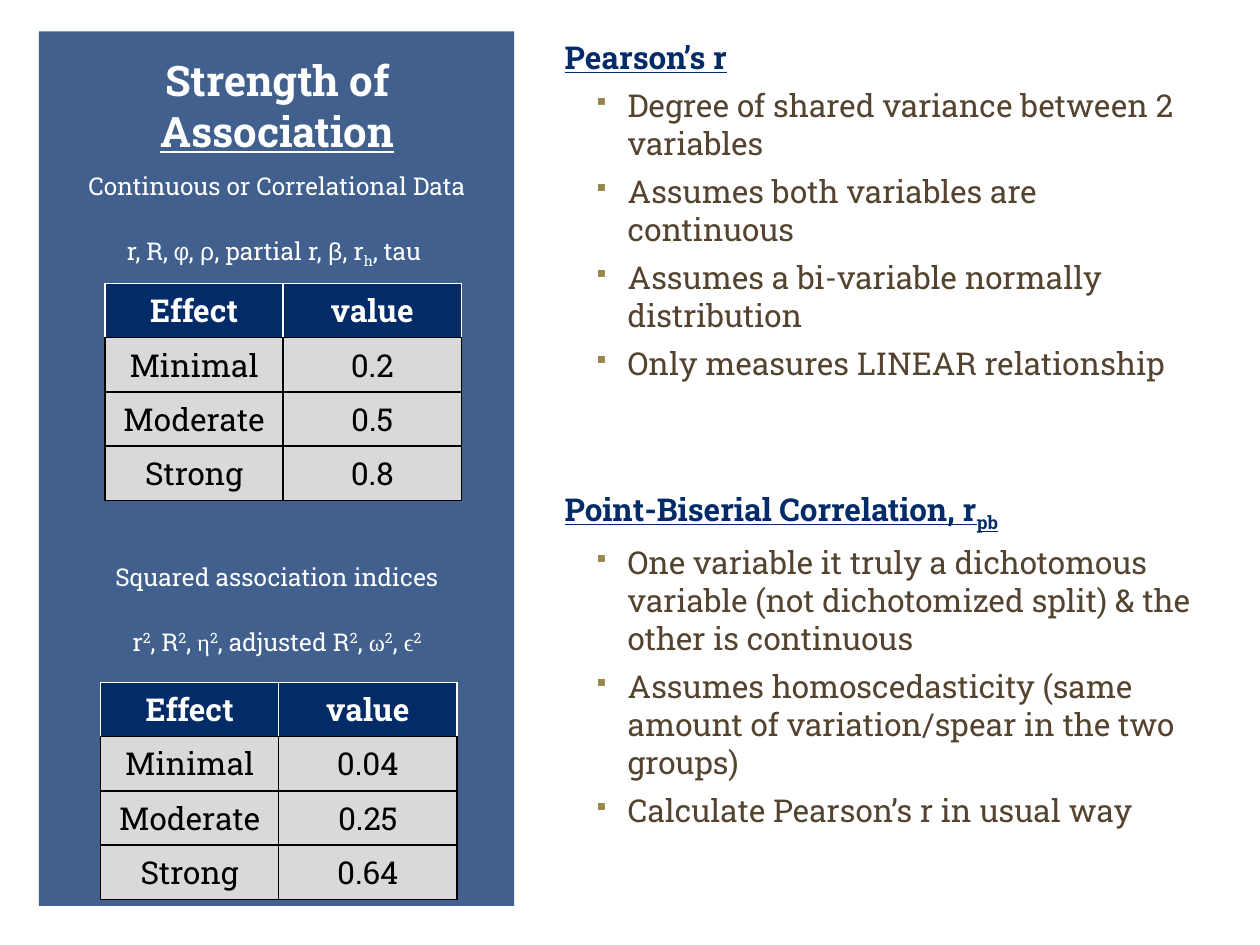
from lxml.etree import SubElement
from pptx import Presentation
from pptx.dml.color import RGBColor
from pptx.enum.shapes import MSO_SHAPE as Shape
from pptx.enum.text import MSO_ANCHOR as Anchor, PP_ALIGN as Align
from pptx.oxml.ns import qn
from pptx.util import Pt

FONT = "Roboto Slab"
NAVY, WHITE, BLACK = "022B68", "FFFFFF", "000000"
BROWN, GOLD, GREY = "54432F", "99864B", "D9D9D9"
BASELINES = {"sub": "-25000", "sup": "30000"}
MONO, SERIF = "Courier New", "Times New Roman"

TITLE = [("Strength of", False), ("Association", True)]
SQUARE = ("2", "sup")
ASSOCIATIONS = [
    {
        "caption": "Continuous or Correlational Data",
        "indices": [("r, R, ", ""), ("φ", MONO), (", ", ""), ("ρ", MONO),
                    (", partial r, ", ""), ("β", MONO), (", r", ""),
                    ("h", "sub"), (", tau ", "")],
        "effects": [("Effect", "value"), ("Minimal", "0.2"),
                    ("Moderate", "0.5"), ("Strong", "0.8")],
        "caption_top": 94.3, "table_at": (60, 162),
    },
    {
        "caption": "Squared association indices",
        "indices": [("r", ""), SQUARE, (", R", ""), SQUARE, (", ", ""),
                    ("η", SERIF), SQUARE, (", adjusted R", ""), SQUARE,
                    (", ", ""), ("ω", SERIF), SQUARE, (", ", ""),
                    ("ϵ", SERIF), SQUARE],
        "effects": [("Effect", "value"), ("Minimal", "0.04"),
                    ("Moderate", "0.25"), ("Strong", "0.64")],
        "caption_top": 317.7, "table_at": (57.5, 390),
    },
]
CORRELATIONS = [
    ([("Pearson’s r", "")], 0,
     ["Degree of shared variance between 2 variables",
      "Assumes both variables are continuous",
      "Assumes a bi-variable normally distribution",
      "Only measures LINEAR relationship"]),
    ([("Point-Biserial Correlation, r", ""), ("pb", "sub")], 61.5,
     ["One variable it truly a dichotomous variable (not dichotomized split)"
      " & the other is continuous",
      "Assumes homoscedasticity (same amount of variation/spear in the two"
      " groups)",
      "Calculate Pearson’s r in usual way"]),
]
COLUMN_WIDTH, ROW_HEIGHT = 101.8, 31


def rgb(color):
    return RGBColor.from_string(color)


def add_text_frame(left, top, width, height):
    frame = slide.shapes.add_textbox(
        Pt(left), Pt(top), Pt(width), Pt(height)).text_frame
    frame.word_wrap = True
    return frame


def next_paragraph(frame):
    first = frame.paragraphs[0]
    return frame.add_paragraph() if first.runs else first


def write(paragraph, runs, size, color, bold=False, underline=False,
          before=0, align=Align.CENTER):
    paragraph.alignment = align
    paragraph.space_before = Pt(before)
    font = paragraph.font
    font.name, font.size = FONT, Pt(size)
    font.bold, font.underline = bold, underline
    font.color.rgb = rgb(color)
    for text, style in runs:
        run = paragraph.add_run()
        run.text = text
        if style in BASELINES:
            run._r.get_or_add_rPr().set("baseline", BASELINES[style])
        elif style:
            run.font.name = style


def add_bullet(paragraph):
    properties = paragraph._p.get_or_add_pPr()
    properties.set("marL", str(Pt(36)))
    properties.set("indent", str(Pt(-18)))
    color = SubElement(properties, qn("a:buClr"))
    SubElement(color, qn("a:srgbClr"), val=GOLD)
    SubElement(properties, qn("a:buSzPct"), val="75000")
    SubElement(properties, qn("a:buFont"), typeface="Wingdings", charset="2")
    SubElement(properties, qn("a:buChar"), char="§")


def set_borders(cell, sides):
    properties = cell._tc.get_or_add_tcPr()
    for position, (side, color) in enumerate(sides.items()):
        line = SubElement(properties, qn(f"a:ln{side}"), w=str(Pt(1)))
        fill = SubElement(line, qn("a:solidFill"))
        SubElement(fill, qn("a:srgbClr"), val=color)
        properties.insert(position, line)


def add_effect_table(left, top, effects):
    columns = len(effects[0])
    table = slide.shapes.add_table(
        len(effects), columns, Pt(left), Pt(top),
        Pt(COLUMN_WIDTH * columns), Pt(ROW_HEIGHT * len(effects))).table
    table.horz_banding = False
    for row, values in enumerate(effects):
        header = row == 0
        edge = WHITE if header else BLACK
        for column, value in enumerate(values):
            cell = table.cell(row, column)
            cell.fill.solid()
            cell.fill.fore_color.rgb = rgb(NAVY if header else GREY)
            set_borders(cell, {"L": edge, "R": edge, "T": edge, "B": BLACK})
            write(cell.text_frame.paragraphs[0], [(value, "")], 18,
                  WHITE if header else BLACK, bold=header)


deck = Presentation()
deck.slide_width, deck.slide_height = Pt(720), Pt(540)
slide = deck.slides.add_slide(deck.slide_layouts[6])

panel = slide.shapes.add_shape(
    Shape.RECTANGLE, Pt(22.3), Pt(18), Pt(271.5), Pt(499.7))
panel.shadow.inherit = False
panel.line.fill.background()
panel.fill.solid()
panel.fill.fore_color.rgb = rgb(NAVY)
panel_color = panel._element.spPr.find(".//" + qn("a:srgbClr"))
SubElement(panel_color, qn("a:alpha"), val="75000")

title = add_text_frame(46.8, 32, 223.2, 57)
title.vertical_anchor = Anchor.BOTTOM
title.margin_top = title.margin_bottom = 0
for line, underline in TITLE:
    write(next_paragraph(title), [(line, "")], 24, WHITE, True, underline)

body = add_text_frame(315.6, 18, 380.2, 460.8)
for heading, gap, points in CORRELATIONS:
    write(next_paragraph(body), heading, 18, NAVY, True, True, gap, Align.LEFT)
    for point in points:
        paragraph = next_paragraph(body)
        add_bullet(paragraph)
        write(paragraph, [(point, "")], 18, BROWN, before=6, align=Align.LEFT)

for association in ASSOCIATIONS:
    caption = add_text_frame(30.2, association["caption_top"], 256.3, 62)
    write(next_paragraph(caption), [(association["caption"], "")], 14, WHITE)
    write(next_paragraph(caption), association["indices"], 14, WHITE, before=20)
    add_effect_table(*association["table_at"], association["effects"])

deck.save("out.pptx")
